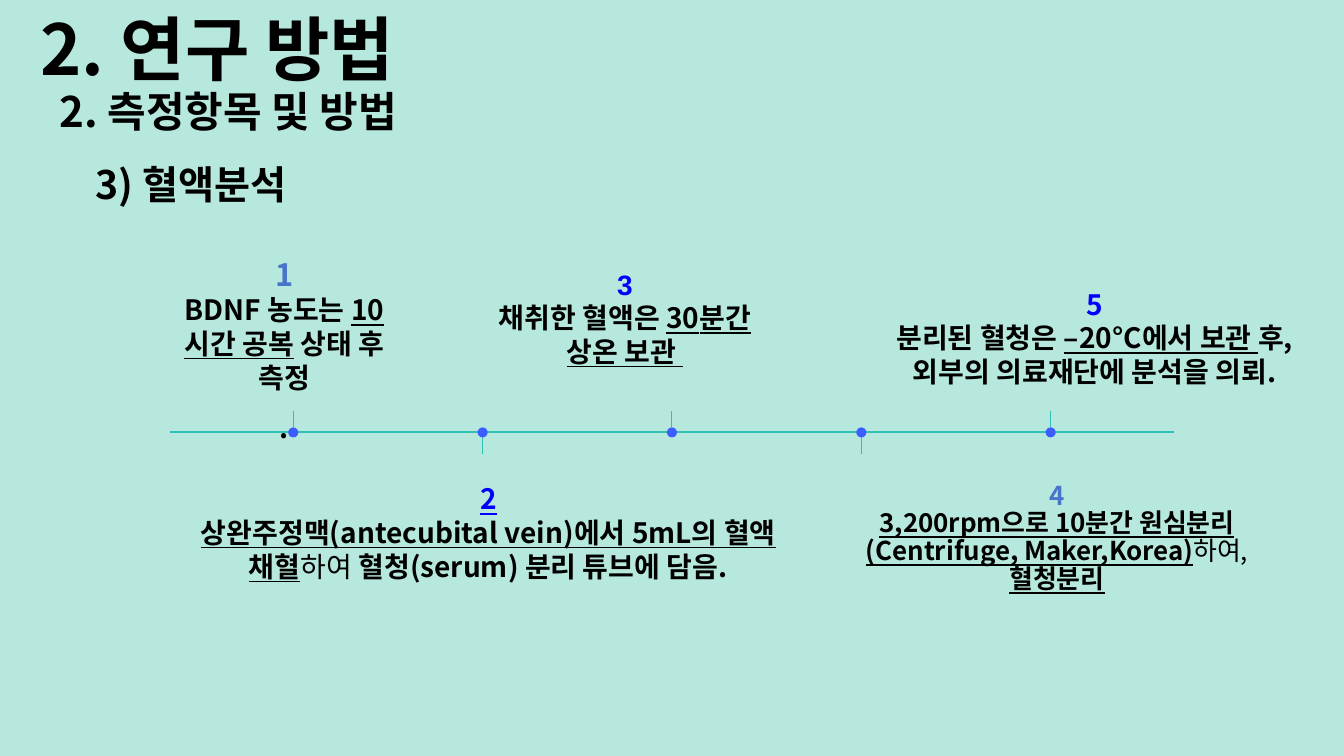
from lxml import etree
from pptx import Presentation
from pptx.dml.color import RGBColor
from pptx.enum.shapes import MSO_CONNECTOR, MSO_SHAPE
from pptx.enum.text import MSO_ANCHOR, MSO_AUTO_SIZE, PP_ALIGN
from pptx.oxml.ns import qn
from pptx.util import Pt

LEFT, CENTER = PP_ALIGN.LEFT, PP_ALIGN.CENTER
TOP, MIDDLE = MSO_ANCHOR.TOP, MSO_ANCHOR.MIDDLE
NO_FIT = MSO_AUTO_SIZE.NONE
STRAIGHT = MSO_CONNECTOR.STRAIGHT
BAR, DOT = MSO_SHAPE.FLOWCHART_PROCESS, MSO_SHAPE.OVAL

KR, SC, ARIAL = "Noto Sans CJK KR", "Noto Sans CJK SC", "Arial"
BLACK, BLUE, STEEL = "000000", "0000FF", "4874CB"
MINT, TEAL, DOT_BLUE = "B7E8DD", "30C0B4", "3C5DFF"


def color(hex_text):
    return RGBColor.from_string(hex_text)


def add_run(p, text, size, font=KR, ink=BLACK, bold=True, underline=False):
    r = p.add_run()
    r.text = text
    r.font.size = Pt(size)
    r.font.bold = bold
    r.font.underline = underline
    r.font.color.rgb = color(ink)
    r.font.name = font
    ea = etree.SubElement(r.font._element, qn("a:ea"))
    ea.set("typeface", font)


def set_frame(tf, anchor, insets):
    tf.word_wrap = True
    tf.auto_size = NO_FIT
    tf.vertical_anchor = anchor
    tf.margin_left, tf.margin_top, tf.margin_right, tf.margin_bottom = map(Pt, insets)


def add_text_box(s, box, anchor=TOP, insets=(7.2, 3.6, 7.2, 3.6)):
    tf = s.shapes.add_textbox(*map(Pt, box)).text_frame
    set_frame(tf, anchor, insets)
    return tf


def add_title(s, box):
    title = s.shapes.title
    title.left, title.top, title.width, title.height = map(Pt, box)
    set_frame(title.text_frame, TOP, (29, 3.6, 0, 3.6))
    p = title.text_frame.paragraphs[0]
    p.alignment = LEFT
    add_run(p, "2. 연구 방법", 50)


def add_heading(s, box, text, size, insets):
    p = add_text_box(s, box, insets=insets).paragraphs[0]
    p.alignment = LEFT
    add_run(p, text, size)


def add_timeline(s, box, first, step, count):
    left, top, width, height = box
    middle = top + height / 2
    bar = s.shapes.add_shape(BAR, *map(Pt, box))
    bar.shadow.inherit = False
    bar.fill.solid()
    bar.fill.fore_color.rgb = color(TEAL)
    bar.line.fill.background()
    for i in range(count):
        x = left + first + i * step
        near, far = (-3.6, -15.3) if i % 2 == 0 else (3.6, 15.3)
        tick = s.shapes.add_connector(
            STRAIGHT, Pt(x), Pt(middle + near), Pt(x), Pt(middle + far))
        tick.line.color.rgb = color(TEAL)
        tick.line.width = Pt(0.75)
        etree.SubElement(tick._element.spPr, qn("a:effectLst"))
        dot = s.shapes.add_shape(DOT, Pt(x - 3.6), Pt(middle - 3.6), Pt(7.2), Pt(7.2))
        dot.shadow.inherit = False
        dot.fill.solid()
        dot.fill.fore_color.rgb = color(DOT_BLUE)
        dot.line.fill.background()


def add_step(s, box, number, runs, size=20, spacing=(1, 1), tail=None,
             anchor=MIDDLE, insets=(0, 0, 0, 0)):
    tf = add_text_box(s, box, anchor, insets)
    p = tf.paragraphs[0]
    p.alignment = CENTER
    p.line_spacing = spacing[0]
    add_run(p, **number)
    p = tf.add_paragraph()
    p.alignment = CENTER
    p.line_spacing = spacing[1]
    for text, bold, underline in runs:
        add_run(p, text, size, bold=bold, underline=underline)
    if tail:
        p = tf.add_paragraph()
        p.alignment = CENTER
        p.line_spacing = spacing[0]
        add_run(p, tail, size)


def add_steps(s):
    add_step(s, (117.4, 190.8, 171.4, 105.1),
             dict(text="1", size=22, font=SC, ink=STEEL),
             [("BDNF 농도는 ", True, False), ("10시간 공복", True, True),
              (" 상태 후 측정", True, False)],
             spacing=(1.5, 1), tail=".")
    add_step(s, (353.5, 190.8, 185.8, 72),
             dict(text="3", size=20, font=ARIAL, ink=BLUE),
             [("채취한 혈액은 ", True, False), ("30분간 상온 보관 ", True, True)])
    add_step(s, (635.8, 196.6, 292.3, 89.3),
             dict(text="5", size=20, ink=BLUE),
             [("분리된 혈청은 ", True, False), ("–20°C에서 보관 ", True, True),
              ("후, 외부의 의료재단에 분석을 의뢰.", True, False)])
    add_step(s, (610.6, 331.9, 288.7, 94.3),
             dict(text="4", size=18.5, ink=STEEL),
             [("3,200rpm으로 10분간 원심분리(Centrifuge, Maker,Korea)", True, True),
              ("하여, ", False, False), ("혈청분리", True, True)],
             size=18.5, spacing=(1.4, 0.9))
    add_step(s, (108.7, 340.6, 480.2, 78.5),
             dict(text="2", size=20, ink=BLUE, underline=True),
             [("상완주정맥(antecubital vein)에서 5mL의 혈액 채혈", True, True),
              ("하여 ", False, False), ("혈청(serum) 분리 튜브에 담음.", True, False)],
             anchor=TOP, insets=(7.2, 3.6, 7.2, 3.6))


def main():
    prs = Presentation()
    prs.slide_width, prs.slide_height = Pt(960), Pt(540)
    s = prs.slides.add_slide(prs.slide_layouts[5])
    s.background.fill.solid()
    s.background.fill.fore_color.rgb = color(MINT)
    add_timeline(s, (121.7, 308.2, 717.1, 1.4), first=87.8, step=135.25, count=5)
    add_steps(s)
    add_title(s, (0, 0, 338.4, 64.8))
    add_heading(s, (42.5, 61.2, 850.3, 51.1), "2. 측정항목 및 방법", 30, (0, 0, 0, 0))
    add_heading(s, (61.2, 110.9, 480.2, 40.3), "3) 혈액분석", 28, (7.2, 3.6, 7.2, 3.6))
    prs.save("out.pptx")


if __name__ == "__main__":
    main()
